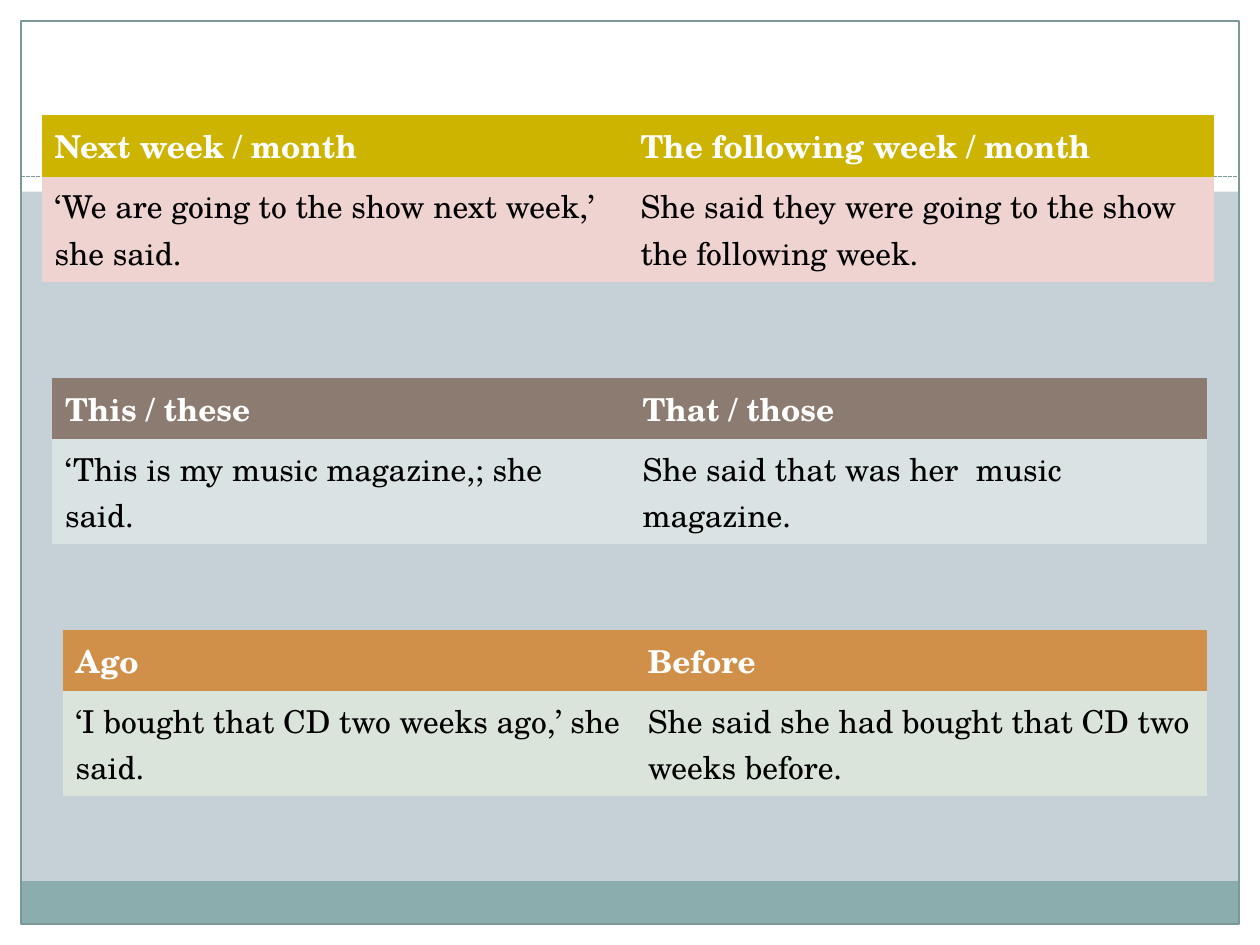
from lxml.etree import SubElement
from pptx import Presentation
from pptx.dml.color import RGBColor
from pptx.enum.dml import MSO_LINE
from pptx.enum.shapes import MSO_CONNECTOR, MSO_SHAPE
from pptx.oxml.ns import qn
from pptx.util import Pt

FONT = "TeX Gyre Schola"
WHITE = RGBColor(0xFF, 0xFF, 0xFF)
BLACK = RGBColor(0, 0, 0)
BACKGROUND = RGBColor(0xC5, 0xD1, 0xD7)
FOOTER = RGBColor(0x8C, 0xAD, 0xAE)
FRAME = RGBColor(0x7C, 0x99, 0x9A)
MUSTARD, PINK = RGBColor(0xCC, 0xB4, 0x00), RGBColor(0xEE, 0xD3, 0xD0)
BROWN, PALE_BLUE = RGBColor(0x8C, 0x7B, 0x70), RGBColor(0xDA, 0xE3, 0xE3)
ORANGE, PALE_GREEN = RGBColor(0xD1, 0x90, 0x49), RGBColor(0xDB, 0xE4, 0xDA)

WIDTH, HEIGHT, MARGIN = 720, 540, 12
HEADER_BOTTOM, DIVIDER_Y = 109.5, 101
FOOTER_HEIGHT = 24.5
ROW_HEIGHTS = (35, 59.8)

# left, top, column width, header fill, body fill, rows
EXAMPLES = [
    (24, 66, 334.8, MUSTARD, PINK, [
        ("Next week / month", "The following week / month"),
        ("‘We are going to the show next week,’ she said.",
         "She said they were going to the show the following week."),
    ]),
    (30, 216, 330, BROWN, PALE_BLUE, [
        ("This / these", "That / those"),
        ("‘This is my music magazine,; she said.",
         "She said that was her  music magazine."),
    ]),
    (36, 360, 327, ORANGE, PALE_GREEN, [
        ("Ago", "Before"),
        ("‘I bought that CD two weeks ago,’ she said.",
         "She said she had bought that CD two weeks before."),
    ]),
]


def add_rectangle(slide, left, top, width, height, fill=None, line=None):
    rectangle = slide.shapes.add_shape(
        MSO_SHAPE.RECTANGLE, Pt(left), Pt(top), Pt(width), Pt(height))
    rectangle.shadow.inherit = False
    if fill is None:
        rectangle.fill.background()
    else:
        rectangle.fill.solid()
        rectangle.fill.fore_color.rgb = fill
    if line is None:
        rectangle.line.fill.background()
    else:
        rectangle.line.color.rgb = line
        rectangle.line.width = Pt(0.75)


def add_backdrop(slide):
    slide.background.fill.solid()
    slide.background.fill.fore_color.rgb = BACKGROUND
    inner_width, inner_height = WIDTH - 2 * MARGIN, HEIGHT - 2 * MARGIN
    bottom = HEIGHT - MARGIN

    add_rectangle(slide, 0, bottom, WIDTH, MARGIN, WHITE)
    add_rectangle(slide, 0, 0, WIDTH, HEADER_BOTTOM, WHITE)
    for left in (0, WIDTH - MARGIN):
        add_rectangle(slide, left, 0, MARGIN, HEIGHT, WHITE)
    add_rectangle(slide, MARGIN, bottom - FOOTER_HEIGHT,
                  inner_width, FOOTER_HEIGHT, FOOTER)
    add_rectangle(slide, MARGIN, MARGIN, inner_width, inner_height, line=FRAME)

    divider = slide.shapes.add_connector(
        MSO_CONNECTOR.STRAIGHT, Pt(MARGIN), Pt(DIVIDER_Y),
        Pt(WIDTH - MARGIN), Pt(DIVIDER_Y))
    divider.line.color.rgb = FRAME
    divider.line.width = Pt(0.75)
    divider.line.dash_style = MSO_LINE.SQUARE_DOT
    SubElement(divider._element.spPr, qn("a:effectLst"))


def add_example(slide, left, top, column_width, header_fill, body_fill, rows):
    table = slide.shapes.add_table(
        len(rows), 2, Pt(left), Pt(top),
        Pt(2 * column_width), Pt(sum(ROW_HEIGHTS))).table
    for column in table.columns:
        column.width = Pt(column_width)
    for row_index, texts in enumerate(rows):
        is_header = row_index == 0
        table.rows[row_index].height = Pt(ROW_HEIGHTS[row_index])
        for column_index, text in enumerate(texts):
            cell = table.cell(row_index, column_index)
            cell.text = text
            cell.fill.solid()
            cell.fill.fore_color.rgb = header_fill if is_header else body_fill
            font = cell.text_frame.paragraphs[0].font
            font.name, font.size, font.bold = FONT, Pt(18), is_header
            font.color.rgb = WHITE if is_header else BLACK
    # The "No Style, No Grid" table style leaves the cells without borders
    table._tbl.tblPr.find(qn("a:tableStyleId")).text = (
        "{2D5ABB26-0587-4C30-8999-92F81FD0307C}")


def main():
    presentation = Presentation()
    presentation.slide_width, presentation.slide_height = Pt(WIDTH), Pt(HEIGHT)
    slide = presentation.slides.add_slide(presentation.slide_layouts[6])
    add_backdrop(slide)
    for example in EXAMPLES:
        add_example(slide, *example)
    presentation.save("out.pptx")


if __name__ == "__main__":
    main()
